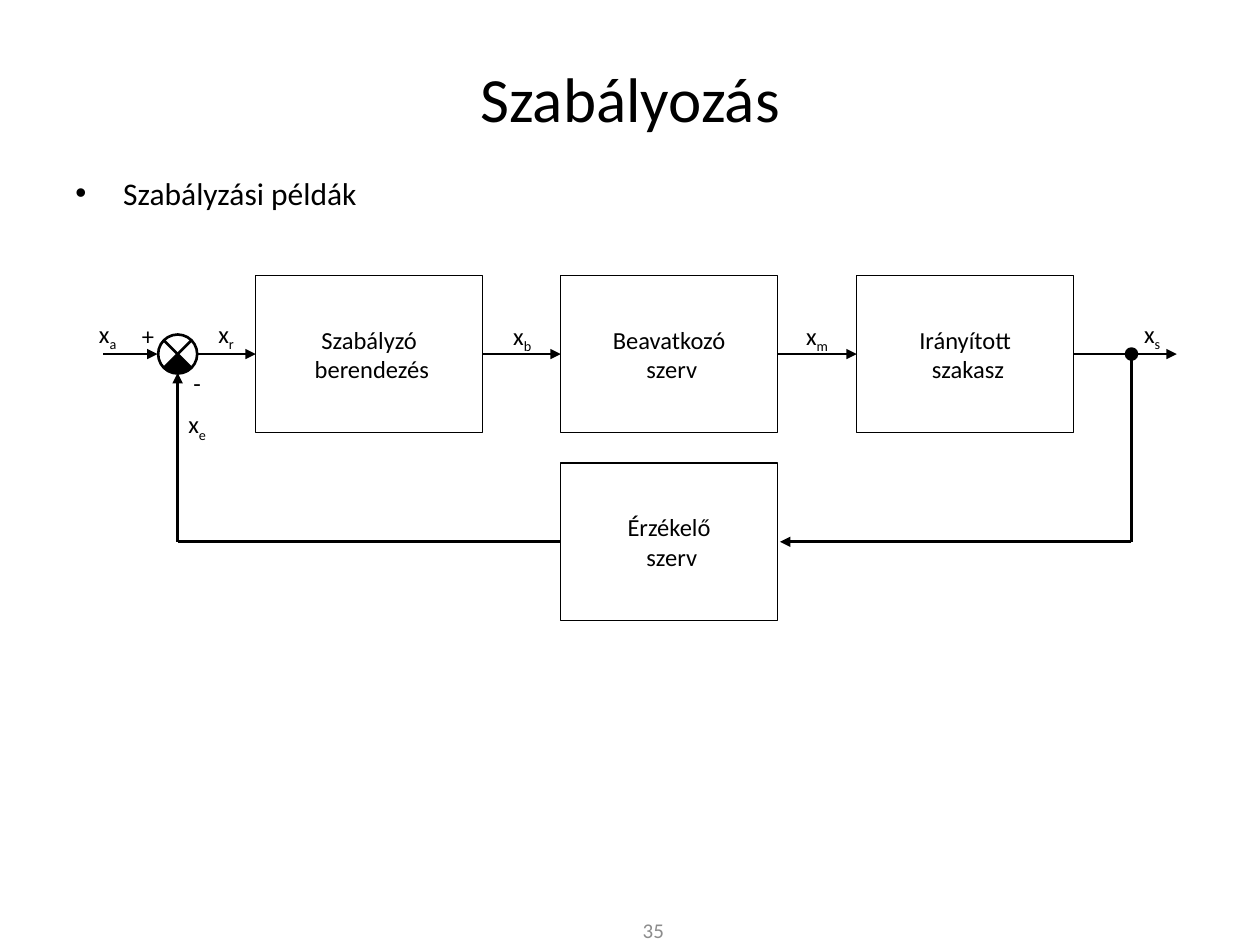
from dataclasses import dataclass

from lxml import etree
from pptx import Presentation
from pptx.dml.color import RGBColor
from pptx.enum.shapes import MSO_CONNECTOR, MSO_SHAPE
from pptx.enum.text import MSO_ANCHOR, PP_ALIGN
from pptx.oxml.ns import qn
from pptx.util import Inches, Pt

LEFT, CENTER = PP_ALIGN.LEFT, PP_ALIGN.CENTER
TOP, MIDDLE = MSO_ANCHOR.TOP, MSO_ANCHOR.MIDDLE
RECT, OVAL, PIE = MSO_SHAPE.RECTANGLE, MSO_SHAPE.OVAL, MSO_SHAPE.PIE
JUNCTION = MSO_SHAPE.FLOWCHART_SUMMING_JUNCTION
STRAIGHT = MSO_CONNECTOR.STRAIGHT


@dataclass(frozen=True)
class Theme:
    font: str = "Calibri"
    ink: str = "000000"
    paper: str = "FFFFFF"
    muted: str = "8C8C8C"
    title: int = 36
    body: int = 18
    label: int = 14
    number: int = 12
    box_line: float = 0.75
    signal_line: float = 1
    feedback_line: float = 1.5
    dot_line: float = 2


THEME = Theme()
SIGNAL_Y, FEEDBACK_Y = 2.81, 4.3
SUM_X, BRANCH_X = 1.41, 8.98
SUM_SIZE, DOT_SIZE = 0.31, 0.08
BOX_H = 1.25
BOXES = [
    (2.03, SIGNAL_Y, 1.8, "Szabályzó\n berendezés"),
    (4.45, SIGNAL_Y, 1.72, "Beavatkozó\n szerv"),
    (6.8, SIGNAL_Y, 1.72, "Irányított\n szakasz"),
    (4.45, FEEDBACK_Y, 1.72, "Érzékelő\n szerv"),
]
SIGNALS = [(0.82, 1.25), (1.56, 2.03), (3.83, 4.45), (6.17, 6.8), (8.52, 9.34)]
FEEDBACK = [
    ((BRANCH_X, SIGNAL_Y), (BRANCH_X, FEEDBACK_Y), False),
    ((BRANCH_X, FEEDBACK_Y), (6.19, FEEDBACK_Y), True),
    ((4.45, FEEDBACK_Y), (SUM_X, FEEDBACK_Y), False),
    ((SUM_X, FEEDBACK_Y), (SUM_X, 2.96), True),
]
LABELS = [
    (0.62, 2.48, "x", "a"),
    (0.94, 2.5, "+", ""),
    (1.33, 2.87, "-", ""),
    (1.33, 3.2, "x", "e"),
    (1.56, 2.48, "x", "r"),
    (3.91, 2.5, "x", "b"),
    (6.25, 2.5, "x", "m"),
    (8.91, 2.48, "x", "s"),
]


def rgb(value):
    return RGBColor.from_string(value)


def apply(target, **values):
    for name, value in values.items():
        setattr(target, name, value)


def add_run(p, text, size, color=THEME.ink, subscript=False):
    r = p.add_run()
    r.text = text
    apply(r.font, name=THEME.font, size=Pt(size))
    r.font.color.rgb = rgb(color)
    if subscript:
        r._r.get_or_add_rPr().set("baseline", "-25000")


def write(tf, text, size, color=THEME.ink, align=CENTER, anchor=MIDDLE):
    apply(tf, word_wrap=True, vertical_anchor=anchor)
    for i, line in enumerate(text.split("\n")):
        p = tf.add_paragraph() if i else tf.paragraphs[0]
        p.alignment = align
        add_run(p, line, size, color)
    return tf.paragraphs[0]


def add_text(slide, box, text, size, **style):
    sp = slide.shapes.add_textbox(*map(Inches, box))
    return write(sp.text_frame, text, size, **style)


def add_bullet(slide, box, text):
    p = add_text(slide, box, text, THEME.body, align=LEFT, anchor=TOP)
    p.space_before = Pt(0.2 * THEME.body)
    pPr = p._p.get_or_add_pPr()
    indent = Inches(0.38)
    pPr.set("marL", str(indent))
    pPr.set("indent", str(-indent))
    etree.SubElement(pPr, qn("a:buFont")).set("typeface", "Arial")
    etree.SubElement(pPr, qn("a:buChar")).set("char", "•")


def add_label(slide, x, y, symbol, index):
    p = add_text(slide, (x, y, 0.47, 0.34), symbol, THEME.label, anchor=TOP)
    if index:
        add_run(p, index, THEME.label, subscript=True)


def add_figure(slide, kind, box, fill, width=None):
    sp = slide.shapes.add_shape(kind, *map(Inches, box))
    sp.shadow.inherit = False
    sp.fill.solid()
    sp.fill.fore_color.rgb = rgb(fill)
    if width is None:
        sp.line.fill.background()
    else:
        sp.line.color.rgb = rgb(THEME.ink)
        sp.line.width = Pt(width)
    return sp


def add_block(slide, x, center_y, width, text):
    box = (x, center_y - BOX_H / 2, width, BOX_H)
    sp = add_figure(slide, RECT, box, THEME.paper, THEME.box_line)
    write(sp.text_frame, text, THEME.label)


def add_line(slide, start, end, width, arrow=True):
    cn = slide.shapes.add_connector(STRAIGHT, *map(Inches, start + end))
    cn.line.color.rgb = rgb(THEME.ink)
    cn.line.width = Pt(width)
    if arrow:
        ln = cn.line._get_or_add_ln()
        etree.SubElement(ln, qn("a:tailEnd")).set("type", "triangle")
    etree.SubElement(cn._element.spPr, qn("a:effectLst"))


def centered(x, y, size):
    return x - size / 2, y - size / 2, size, size


def add_summing_point(slide):
    box = centered(SUM_X, SIGNAL_Y, SUM_SIZE)
    add_figure(slide, JUNCTION, box, THEME.paper, THEME.feedback_line)
    pie = add_figure(slide, PIE, box, THEME.ink)
    pie.adjustments[0], pie.adjustments[1] = 28.12, 79.85


def main():
    prs = Presentation()
    apply(prs, slide_width=Inches(10), slide_height=Inches(7.5))
    slide = prs.slides.add_slide(prs.slide_layouts[6])
    add_text(slide, (0.5, 0.3, 9, 0.95), "Szabályozás", THEME.title)
    add_bullet(slide, (0.5, 1.33, 9, 5.86), "Szabályzási példák")
    add_text(slide, (4.77, 7.26, 0.83, 0.24), "35", THEME.number, color=THEME.muted)
    for block in BOXES:
        add_block(slide, *block)
    for x1, x2 in SIGNALS:
        add_line(slide, (x1, SIGNAL_Y), (x2, SIGNAL_Y), THEME.signal_line)
    for start, end, arrow in FEEDBACK:
        add_line(slide, start, end, THEME.feedback_line, arrow)
    add_summing_point(slide)
    dot = centered(BRANCH_X, SIGNAL_Y, DOT_SIZE)
    add_figure(slide, OVAL, dot, THEME.ink, THEME.dot_line)
    for label in LABELS:
        add_label(slide, *label)
    prs.save("out.pptx")


if __name__ == "__main__":
    main()
